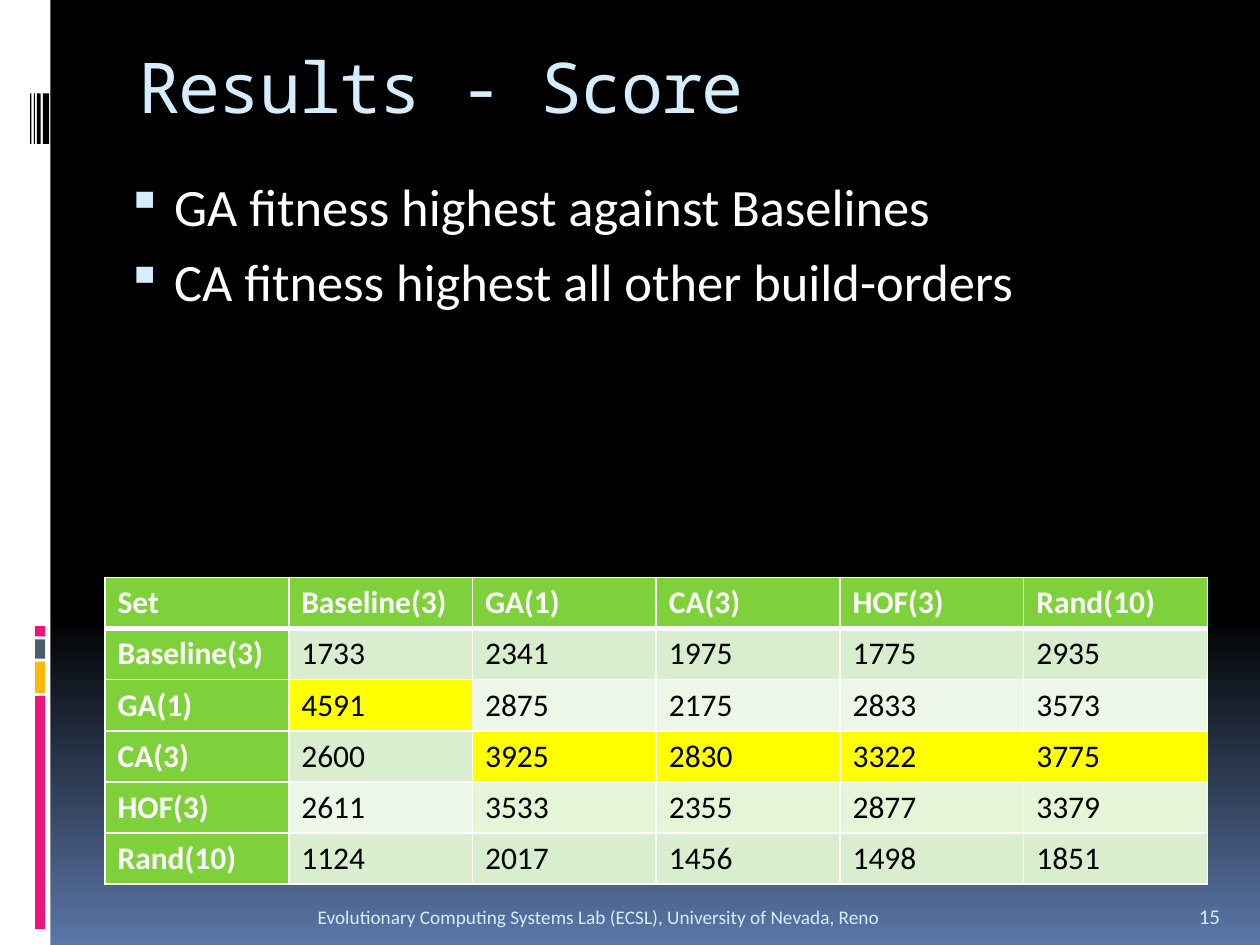
import dataclasses

import lxml.etree
import pptx
import pptx.dml.color
import pptx.enum.shapes
import pptx.enum.text
import pptx.oxml.ns
import pptx.util

Pt = pptx.util.Pt
qn = pptx.oxml.ns.qn
ANCHOR = pptx.enum.text.MSO_ANCHOR
ALIGN = pptx.enum.text.PP_ALIGN


@dataclasses.dataclass(frozen=True)
class Theme:
    """Colours, fonts and type sizes of the slide."""
    black: str = "000000"
    white: str = "FFFFFF"
    blue: str = "5B77A8"
    pale: str = "D6ECFF"
    pink: str = "EA157A"
    amber: str = "FEB80A"
    slate: str = "4E5B6F"
    green: str = "7FD13B"
    odd_row: str = "D8EECE"
    even_row: str = "ECF7E8"
    soft: str = "E5F6D8"
    best: str = "FFFF00"
    sans: str = "Calibri"
    mono: str = "Noto Sans Mono"
    title: float = 40
    body: float = 30
    cell: float = 18
    number: float = 12
    footer: float = 11


THEME = Theme()
SCORES = [
    ["Set", "Baseline(3)", "GA(1)", "CA(3)", "HOF(3)", "Rand(10)"],
    ["Baseline(3)", "1733", "2341", "1975", "1775", "2935"],
    ["GA(1)", "4591", "2875", "2175", "2833", "3573"],
    ["CA(3)", "2600", "3925", "2830", "3322", "3775"],
    ["HOF(3)", "2611", "3533", "2355", "2877", "3379"],
    ["Rand(10)", "1124", "2017", "1456", "1498", "1851"],
]


def rgb(value):
    """Return the colour object for a hex value."""
    return pptx.dml.color.RGBColor.from_string(value)


def apply(target, values):
    """Set every attribute of a dict on a target."""
    for name, value in values.items():
        setattr(target, name, value)


def write(para, text, size, colour, font=THEME.sans, bold=False):
    """Add one formatted span to a paragraph."""
    span = para.add_run()
    span.text = text
    apply(span.font, {"size": Pt(size), "name": font, "bold": bold})
    span.font.color.rgb = rgb(colour)
    return span


def text_frame(page, box, **frame_values):
    """Add a wrapping text box and return its frame."""
    frame = page.shapes.add_textbox(*map(Pt, box)).text_frame
    apply(frame, {"word_wrap": True, **frame_values})
    return frame


def paint_background(page):
    """Fade the page from black to blue at the foot."""
    fill = page.background.fill
    fill.gradient()
    fill.gradient_angle = 270
    for stop, position, colour in zip(fill.gradient_stops, (0.65, 1), (THEME.black, THEME.blue)):
        stop.position = position
        stop.color.rgb = rgb(colour)


def add_block(page, box, colour):
    """Add a plain filled rectangle."""
    block = page.shapes.add_shape(pptx.enum.shapes.MSO_SHAPE.RECTANGLE, *map(Pt, box))
    block.shadow.inherit = False
    block.fill.solid()
    block.fill.fore_color.rgb = rgb(colour)
    block.line.fill.background()


def add_sidebar(page, box):
    """Draw the white band with its stacked blocks and thin stripes."""
    left, top, width, height = box
    add_block(page, box, THEME.white)
    block_top = top + 357.8
    for block_height, colour in ((5.8, THEME.pink), (10.9, THEME.slate),
                                 (17.8, THEME.amber), (133.2, THEME.pink)):
        add_block(page, (left + 20, block_top, 5.8, block_height), colour)
        block_top += block_height + 1.8
    for offset, stripe_width in ((17.2, 0.7), (19.3, 0.7), (21, 2.3), (24.5, 3.6)):
        add_block(page, (left + offset, top + 53.4, stripe_width, 28.8), THEME.black)


def add_title(page, box, text):
    """Place the slide title."""
    frame = text_frame(page, box, margin_top=Pt(1))
    span = write(frame.paragraphs[0], text, THEME.title, THEME.pale, THEME.mono)
    span.font._element.set("spc", "-100")


def add_bullets(page, box, lines):
    """Place the bulleted statements."""
    frame = text_frame(page, box)
    for index, line in enumerate(lines):
        para = frame.add_paragraph() if index else frame.paragraphs[0]
        para.space_before = Pt(7 if index else 0)
        properties = para._p.get_or_add_pPr()
        properties.set("marL", str(Pt(32.4)))
        properties.set("indent", str(Pt(-27.4)))
        colour = lxml.etree.SubElement(properties, qn("a:buClr"))
        lxml.etree.SubElement(colour, qn("a:srgbClr"), val=THEME.pale)
        lxml.etree.SubElement(properties, qn("a:buSzPct"), val="95000")
        lxml.etree.SubElement(properties, qn("a:buChar"), char="▪")
        write(para, line, THEME.body, THEME.white)


def border_cell(cell, widths):
    """Draw white borders on the left, right, top and bottom of a cell."""
    properties = cell._tc.get_or_add_tcPr()
    for index, (side, width) in enumerate(zip("LRTB", widths)):
        line = lxml.etree.Element(qn(f"a:ln{side}"), w=str(Pt(width)))
        fill = lxml.etree.SubElement(line, qn("a:solidFill"))
        lxml.etree.SubElement(fill, qn("a:srgbClr"), val=THEME.white)
        properties.insert(index, line)


def cell_colour(row, column):
    """Choose a cell fill from its place and score."""
    if row == 0 or column == 0:
        return THEME.green
    column_scores = [int(line[column]) for line in SCORES[1:]]
    if int(SCORES[row][column]) == max(column_scores):
        return THEME.best
    if SCORES[row][0] == "HOF(3)" and column > 1:
        return THEME.soft
    return THEME.odd_row if row % 2 else THEME.even_row


def add_scores(page, box):
    """Place the score table with the best of each column marked."""
    table = page.shapes.add_table(len(SCORES), len(SCORES[0]), *map(Pt, box)).table
    for column in table.columns:
        column.width = Pt(box[2] / len(SCORES[0]))
    for row_index, values in enumerate(SCORES):
        table.rows[row_index].height = Pt(box[3] / len(SCORES))
        for column_index, value in enumerate(values):
            cell = table.cell(row_index, column_index)
            heading = row_index == 0 or column_index == 0
            cell.fill.solid()
            cell.fill.fore_color.rgb = rgb(cell_colour(row_index, column_index))
            border_cell(cell, (1, 1, 3 if row_index == 1 else 1, 3 if row_index == 0 else 1))
            write(cell.text_frame.paragraphs[0], value, THEME.cell,
                  THEME.white if heading else THEME.black, bold=heading)


def add_footer(page, box, text, number):
    """Place the footer text and the page number at the right."""
    left, top, width, height = box
    frame = text_frame(page, (left, top, 437.8, height), vertical_anchor=ANCHOR.BOTTOM)
    frame.paragraphs[0].alignment = ALIGN.RIGHT
    write(frame.paragraphs[0], text, THEME.footer, THEME.pale)
    frame = text_frame(page, (left + width - 36, top, 36, height), vertical_anchor=ANCHOR.BOTTOM)
    write(frame.paragraphs[0], number, THEME.number, THEME.pale)


def main():
    """Build the slide and save the deck."""
    deck = pptx.Presentation()
    apply(deck, {"slide_width": Pt(720), "slide_height": Pt(540)})
    page = deck.slides.add_slide(deck.slide_layouts[6])
    paint_background(page)
    add_sidebar(page, (0, 0, 28.8, 540))
    add_title(page, (72, 24, 612, 72), "Results - Score")
    add_footer(page, (72, 505.5, 642, 28.8),
               "Evolutionary Computing Systems Lab (ECSL), University of Nevada, Reno", "15")
    add_scores(page, (60, 330, 630, 175.2))
    add_bullets(page, (60, 96, 630, 234), ["GA fitness highest against Baselines",
                                           "CA fitness highest all other build-orders"])
    deck.save("out.pptx")


if __name__ == "__main__":
    main()
